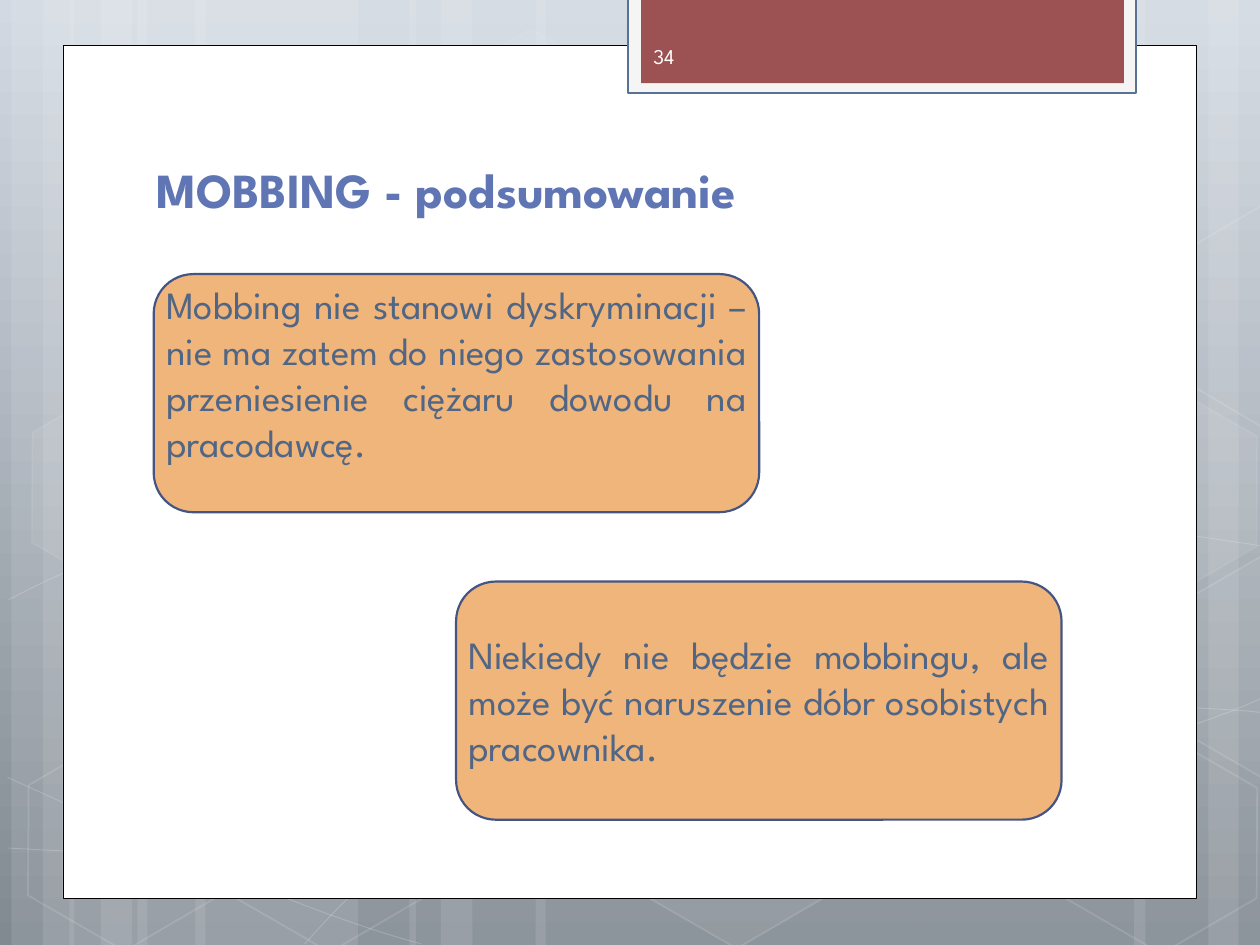
from dataclasses import dataclass
from math import cos, radians, sin
from typing import NamedTuple, Optional

from lxml.etree import SubElement
from pptx import Presentation
from pptx.dml.color import RGBColor
from pptx.enum.shapes import MSO_SHAPE as SHAPE
from pptx.enum.text import MSO_ANCHOR as ANCHOR, MSO_AUTO_SIZE as AUTO, PP_ALIGN as ALIGN
from pptx.oxml.ns import qn
from pptx.util import Pt

WHITE = RGBColor(0xFF, 0xFF, 0xFF)
BLACK = RGBColor(0x00, 0x00, 0x00)
SKY_TOP = RGBColor(0xD2, 0xD9, 0xE2)
SKY_BOTTOM = RGBColor(0x81, 0x89, 0x91)
TAB_PALE = RGBColor(0xF5, 0xF5, 0xF5)
TAB_EDGE = RGBColor(0x57, 0x72, 0x93)
TAB_RED = RGBColor(0x9C, 0x52, 0x52)
TITLE_BLUE = RGBColor(0x60, 0x76, 0xB4)
CARD_ORANGE = RGBColor(0xF0, 0xB5, 0x7A)
CARD_EDGE = RGBColor(0x44, 0x55, 0x83)
CARD_TEXT = RGBColor(0x51, 0x66, 0x85)
NUMBER_TEXT = RGBColor(0xFE, 0xFE, 0xFE)

FONT = "League Spartan"
WIDTH, HEIGHT = 720, 540
HEX_W, HEX_H = 126, 109.44
CARD_W, CARD_H = 346, 136.08
TILT = 30


class Box(NamedTuple):
    left: float
    top: float
    width: float
    height: float


class Bar(NamedTuple):
    left: float
    width: float
    rotation: int = 0


class Hexagon(NamedTuple):
    left: float
    top: float
    fill_alpha: int
    line_alpha: int


class Shard(NamedTuple):
    center: tuple
    points: list
    fill_alpha: int


@dataclass
class Style:
    fill: Optional[RGBColor] = None
    line: Optional[RGBColor] = None
    weight: float = 1
    fill_alpha: int = 100
    line_alpha: int = 100


@dataclass
class Card:
    left: float
    top: float
    text_top: float
    text_height: float
    text: str


BARS = [Bar(78.5, 126), Bar(6.5, 36), Bar(24.5, 59.8), Bar(111.6, 126), Bar(39.6, 36),
        Bar(57.6, 59.8), Bar(528.5, 126, 180), Bar(690.5, 36, 180), Bar(648, 59.8, 180),
        Bar(306, 222.5), Bar(234, 36), Bar(252, 59.8)]

CURVES = [
    [(5, 484.6), (43.9, 486.7), (82.8, 488.9), (136.8, 488.2), (190.8, 486.7), (257.8, 486),
     (329.8, 478.8), (401.8, 471.6), (504, 457.9), (570.2, 444.2), (635.8, 430.6),
     (703.4, 409), (725, 396.7)],
    [(5, 342.7), (25.9, 331.9), (46.8, 321.1), (87.1, 310.3), (128.2, 299.5), (186.5, 283.7),
     (249.8, 278.6), (313.9, 273.6), (391.7, 272.9), (470.9, 278.6), (550.1, 284.4),
     (681.8, 306.7), (725, 312.5)],
    [(4.3, 444.2), (91.4, 483.8), (177.8, 522.7), (240.5, 539.3)],
    [(174.2, 539.3), (187.2, 524.9), (200.2, 510.5), (217.4, 497.5), (234.7, 483.8),
     (259.2, 470.2), (279.4, 460.1), (299.5, 450), (311.8, 445.7), (337.7, 438.5),
     (364.3, 431.3), (412.6, 421.2), (437.8, 416.2), (463, 411.1), (467.3, 411.1),
     (489.6, 409.7), (511.9, 407.5), (547.2, 405.4), (571.7, 404.6), (596.2, 403.9),
     (637.9, 404.6), (637.9, 404.6), (653.8, 404.6), (669.6, 404.6), (685.4, 404.6),
     (699.1, 405.4), (711.4, 406.1), (717.8, 406.8), (724.3, 407.5), (721.4, 406.8),
     (724.3, 407.5)],
]

HEXAGONS = [
    Hexagon(240.5, 25.2, 4, 8), Hexagon(357.8, 424.1, 6, 12), Hexagon(7.9, 425.5, 0, 12),
    Hexagon(10.1, 223.9, 7, 8), Hexagon(125.3, 426.2, 0, 12), Hexagon(542.2, 326.2, 10, 12),
    Hexagon(600.5, 427, 0, 12), Hexagon(600.5, 226.1, 7, 8),
]

SHARDS = [
    Shard((709.2, 374.4), [(666.7, 349.2), (721.4, 317.5), (726.5, 321.1), (726.5, 441.4),
                           (721.4, 444.2), (666.7, 412.6)], 4),
    Shard((709.2, 173.5), [(666.7, 149), (720.7, 117.4), (727.2, 121), (726.5, 240.5),
                           (721.4, 244.1), (666.7, 211.7)], 0),
]

CARDS = [
    Card(87.84, 156.6, 156.96, 140.4,
         "Mobbing nie stanowi dyskryminacji – nie ma zatem do niego zastosowania "
         "przeniesienie ciężaru dowodu na pracodawcę."),
    Card(260.64, 332.3, 356.8, 86.4,
         "Niekiedy nie będzie mobbingu, ale może być naruszenie dóbr osobistych pracownika."),
]


def paint(part, path: str, sp, color: Optional[RGBColor], alpha: int) -> None:
    """Give a fill its colour and opacity, or clear it."""
    if color is None or alpha == 0:
        part.background()
        return
    part.solid()
    part.fore_color.rgb = color
    if alpha < 100:
        clr = sp.element.spPr.find(path + qn("a:solidFill") + "/" + qn("a:srgbClr"))
        SubElement(clr, qn("a:alpha"), val=str(alpha * 1000))


def apply_style(sp, style: Style) -> None:
    """Set the shadow, fill and line of a shape."""
    sp.shadow.inherit = False
    paint(sp.fill, "", sp, style.fill, style.fill_alpha)
    paint(sp.line.fill, qn("a:ln") + "/", sp, style.line, style.line_alpha)
    if style.line is not None:
        sp.line.width = Pt(style.weight)


def add_preset(s, kind, box: Box, style: Style, rotation: int = 0):
    """Add a styled preset shape."""
    sp = s.shapes.add_shape(kind, *map(Pt, box))
    sp.rotation = rotation
    apply_style(sp, style)
    return sp


def add_outline(s, points: list, style: Style, close: bool):
    """Add a styled freeform through the points."""
    start, *rest = [(Pt(x), Pt(y)) for x, y in points]
    builder = s.shapes.build_freeform(*start)
    builder.add_line_segments(rest, close=close)
    sp = builder.convert_to_shape()
    apply_style(sp, style)
    return sp


def add_curve(s, nodes: list) -> None:
    """Add an open chain of cubic Bézier pieces."""
    sp = add_outline(s, nodes, Style(line=WHITE, weight=0.5, line_alpha=20), False)
    outline = next(sp.element.iter(qn("a:path")))
    lines = outline.findall(qn("a:lnTo"))
    for i in range(0, len(lines), 3):
        bezier = SubElement(outline, qn("a:cubicBezTo"))
        for line in lines[i:i + 3]:
            bezier.append(line[0])
            outline.remove(line)


def add_shard(s, shard: Shard) -> None:
    """Add a cut hexagon, drawn upright and then tilted about its centre."""
    cx, cy = shard.center
    c, n = cos(radians(TILT)), sin(radians(TILT))
    upright = [(cx + c * (x - cx) + n * (y - cy), cy - n * (x - cx) + c * (y - cy))
               for x, y in shard.points]
    sp = add_outline(s, upright, Style(WHITE, WHITE, 1, shard.fill_alpha, 12), True)
    sp.rotation = TILT


def add_text(s, box: Box, text: str, font: dict, color: RGBColor, frame: dict,
             align=ALIGN.LEFT) -> None:
    """Add a wrapped text box with one formatted run."""
    tf = s.shapes.add_textbox(*map(Pt, box)).text_frame
    for name, value in {"word_wrap": True, **frame}.items():
        setattr(tf, name, value)
    p = tf.paragraphs[0]
    p.alignment = align
    r = p.add_run()
    r.text = text
    for name, value in {"name": FONT, **font}.items():
        setattr(r.font, name, value)
    r.font.color.rgb = color


def add_backdrop(s) -> None:
    """Draw the gradient, bars, curves and hexagons."""
    fill = s.background.fill
    fill.gradient()
    fill.gradient_angle = 270
    for stop, color in zip(fill.gradient_stops, (SKY_TOP, SKY_BOTTOM)):
        stop.color.rgb = color
    for bar in BARS:
        add_preset(s, SHAPE.RECTANGLE, Box(bar.left, 0, bar.width, HEIGHT),
                   Style(WHITE, fill_alpha=10), bar.rotation)
    for nodes in CURVES:
        add_curve(s, nodes)
    for h in HEXAGONS:
        sp = add_preset(s, SHAPE.HEXAGON, Box(h.left, h.top, HEX_W, HEX_H),
                        Style(WHITE, WHITE, 1, h.fill_alpha, h.line_alpha), TILT)
        sp.adjustments[0] = 0.285
    for shard in SHARDS:
        add_shard(s, shard)


def add_card(s, card: Card) -> None:
    """Draw a rounded card."""
    add_preset(s, SHAPE.ROUNDED_RECTANGLE, Box(card.left, card.top, CARD_W, CARD_H),
               Style(CARD_ORANGE, CARD_EDGE, 1.25))


def add_card_text(s, card: Card) -> None:
    """Write the justified text of a card."""
    add_text(s, Box(card.left, card.text_top, CARD_W, card.text_height), card.text,
             {"size": Pt(22)}, CARD_TEXT, {"auto_size": AUTO.SHAPE_TO_FIT_TEXT}, ALIGN.JUSTIFY)


def main() -> None:
    """Build and save the slide."""
    prs = Presentation()
    prs.slide_width, prs.slide_height = Pt(WIDTH), Pt(HEIGHT)
    s = prs.slides.add_slide(prs.slide_layouts[6])
    add_backdrop(s)
    for box, style in [(Box(36, 25.92, 648, 487.44), Style(WHITE, BLACK, 0.5)),
                       (Box(359, -1.44, 290, 54.8), Style(TAB_PALE, TAB_EDGE, 1.25)),
                       (Box(366.3, -1.44, 275.9, 48.96), Style(TAB_RED))]:
        add_preset(s, SHAPE.RECTANGLE, box, style)
    add_text(s, Box(82.08, 80.64, 552.96, 47.52), "MOBBING - podsumowanie",
             {"size": Pt(28), "bold": True}, TITLE_BLUE, {"vertical_anchor": ANCHOR.BOTTOM})
    for draw in (add_card, add_card_text):
        for card in CARDS:
            draw(s, card)
    add_text(s, Box(366.3, 17.6, 105.12, 28.8), "34", {"size": Pt(12)}, NUMBER_TEXT,
             {"vertical_anchor": ANCHOR.MIDDLE})
    prs.save("out.pptx")


if __name__ == "__main__":
    main()
